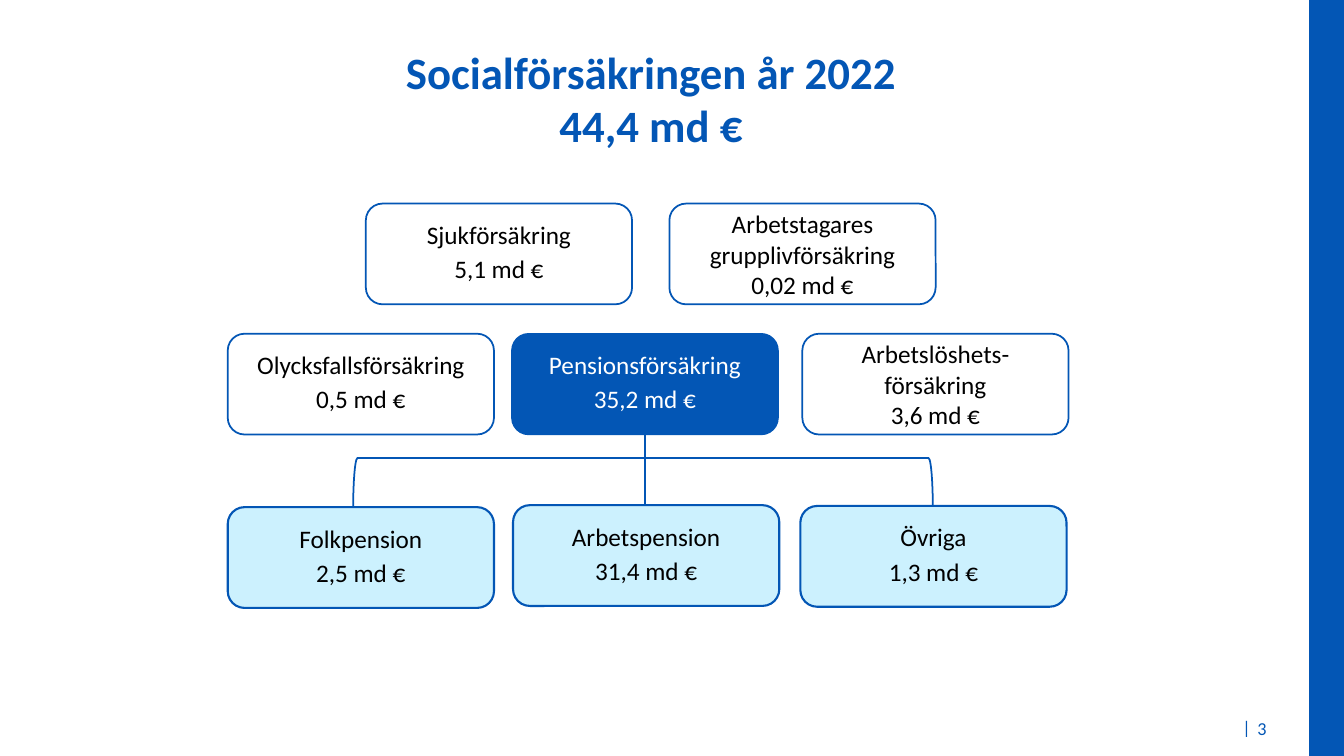
import pptx
import pptx.util
import pptx.dml.color
import pptx.enum.shapes
import pptx.enum.text
import pptx.oxml

Cm = pptx.util.Cm
Pt = pptx.util.Pt
SHAPE = pptx.enum.shapes.MSO_SHAPE
ANCHOR = pptx.enum.text.MSO_ANCHOR
ALIGN = pptx.enum.text.PP_ALIGN

BLUE, PALE, WHITE, BLACK = "0356B5", "CCF1FE", "FFFFFF", "000000"
WIDE, HIGH = 6.71, 2.54


def color(code):
    return pptx.dml.color.RGBColor.from_string(code)


def apply(target, values):
    for name, value in values.items():
        setattr(target, name, value)


def write(shape, lines, ink, size, bold=False, frame=None, para=None, gap=0):
    """Fill a shape with one paragraph per line."""
    text = shape.text_frame
    apply(text, {"word_wrap": True, **(frame or {})})
    for i, line in enumerate(lines):
        p = text.paragraphs[0] if i == 0 else text.add_paragraph()
        p.text = line
        apply(p, para or {})
        if i and gap:
            p.space_before = Pt(gap)
        apply(p.font, {"name": "Calibri", "size": Pt(size), "bold": bold})
        p.font.color.rgb = color(ink)


def label(slide, box, lines, **look):
    shape = slide.shapes.add_textbox(*map(Cm, box))
    write(shape, lines, BLUE, **look)


def draw(slide, kind, box, fill=None, line=None):
    shape = slide.shapes.add_shape(kind, *map(Cm, box))
    shape.shadow.inherit = False
    if fill:
        shape.fill.solid()
        shape.fill.fore_color.rgb = color(fill)
    else:
        shape.fill.background()
    if line:
        shape.line.color.rgb = color(BLUE)
        shape.line.width = Pt(line)
    else:
        shape.line.fill.background()
    return shape


def card(slide, box, lines, fill=None, ink=BLACK, line=1.25, tight=True):
    shape = draw(slide, SHAPE.ROUNDED_RECTANGLE, box, fill, line)
    para = {"alignment": ALIGN.CENTER, "line_spacing": 0.85 if tight else 1.0}
    write(shape, lines, ink, 18, frame={"vertical_anchor": ANCHOR.MIDDLE},
          para=para, gap=6 if tight else 0)


def title(slide, box):
    label(slide, box, ["Socialförsäkringen år 2022", "44,4 md €"], size=32,
          bold=True, para={"alignment": ALIGN.CENTER})


def edge(slide, box):
    """Side band with the page number to its left."""
    left, top, wide, high = box
    draw(slide, SHAPE.RECTANGLE, box, BLUE)
    label(slide, (left - 1.93, top + high - 1.12, 0.74, 0.89), ["|"], size=13,
          frame={"word_wrap": False})
    label(slide, (left - 1.55, top + high - 1.14, 1.12, 0.89), ["3"], size=13,
          frame={"vertical_anchor": ANCHOR.MIDDLE})


def links(slide, box):
    """Bracket over the lower row, with a stem from the pension card."""
    left, top, wide, high = box
    # The bracket is turned a quarter, so its sides are swapped about the centre
    turned = (left + (wide - high) / 2, top - (wide - high) / 2, high, wide)
    draw(slide, SHAPE.RIGHT_BRACKET, turned, line=1.25).rotation = 270
    mid = left + wide / 2 + 0.05
    stem = slide.shapes.add_connector(
        pptx.enum.shapes.MSO_CONNECTOR.STRAIGHT,
        Cm(mid), Cm(top - 0.6), Cm(mid), Cm(top + 1.23))
    stem.line.color.rgb = color(BLUE)
    stem.line.width = Pt(1.25)
    tag = pptx.oxml.ns.qn("a:effectLst")
    stem._element.spPr.append(stem._element.makeelement(tag, {}))


def chart(slide, box):
    """Three rows of cards: offset from the box corner, text, look."""
    left, top, wide, high = box
    loose = {"tight": False}
    main = {"fill": BLUE, "ink": WHITE, "line": 1}
    part = {"fill": PALE, "line": 1.5}
    links(slide, (left + 3.16, top + 6.41, 14.61, 1.32))
    cards = [
        (3.48, 0, ["Sjukförsäkring", "5,1 md €"], {}),
        (11.13, 0, ["Arbetstagares", "grupplivförsäkring", "0,02 md €"], loose),
        (0, 3.28, ["Olycksfallsförsäkring", "0,5 md €"], {}),
        (7.16, 3.28, ["Pensionsförsäkring", "35,2 md €"], main),
        (14.48, 3.28, ["Arbetslöshets-försäkring", "3,6 md €"], loose),
        (0, 7.65, ["Folkpension", "2,5 md €"], part),
        (7.19, 7.6, ["Arbetspension", "31,4 md €"], part),
        (14.43, 7.62, ["Övriga", "1,3 md €"], part),
    ]
    for x, y, lines, look in cards:
        card(slide, (left + x, top + y, WIDE, HIGH), lines, **look)


def main():
    deck = pptx.Presentation()
    apply(deck, {"slide_width": Cm(33.87), "slide_height": Cm(19.05)})
    slide = deck.slides.add_slide(deck.slide_layouts[6])
    edge(slide, (32.99, 0, 0.88, 19.05))
    title(slide, (0, 0.99, 32.82, 3.71))
    chart(slide, (5.74, 5.13, 21.19, 10.19))
    deck.save("out.pptx")


if __name__ == "__main__":
    main()
